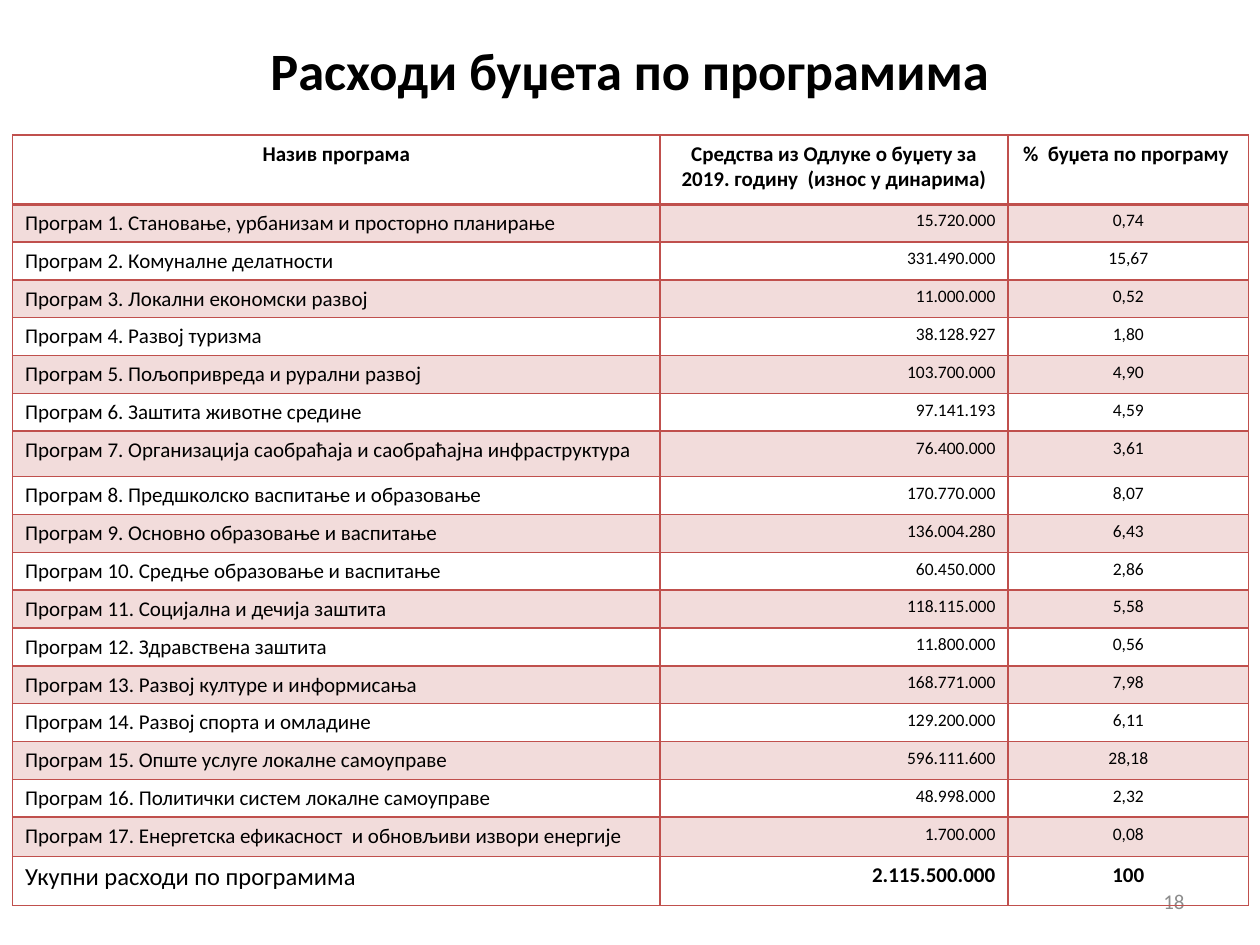
from dataclasses import dataclass
from lxml.etree import SubElement
from pptx import Presentation
from pptx.dml.color import RGBColor
from pptx.enum.text import MSO_ANCHOR, PP_ALIGN
from pptx.oxml import parse_xml
from pptx.oxml.ns import nsdecls, qn
from pptx.util import Inches, Pt

WIDE, HIGH = 10, 7.5
FONT = "Calibri"
HUES = {"ink": "000000", "red": "C0504D", "gray": "8C8C8C"}
LEFT, MID, RIGHT = PP_ALIGN.LEFT, PP_ALIGN.CENTER, PP_ALIGN.RIGHT


@dataclass
class Look:
    size: float
    align: PP_ALIGN
    bold: bool = False
    hue: str = "ink"


@dataclass
class Row:
    cells: tuple[str, str, str]
    looks: tuple[Look, Look, Look]
    high: float = 0.29
    top: float = 1
    base: float = 1
    band: bool = False


# Table text
HEAD = ("Назив програма",
        "Средства из Одлуке о буџету за 2019. годину  (износ у динарима)",
        "%  буџета по програму ")
ITEMS = [
    ("Становање, урбанизам и просторно планирање", "15.720.000", "0,74"),
    ("Комуналне делатности", "331.490.000", "15,67"),
    ("Локални економски развој", "11.000.000", "0,52"),
    ("Развој туризма", "38.128.927", "1,80"),
    ("Пољопривреда и рурални развој", "103.700.000", "4,90"),
    ("Заштита животне средине", "97.141.193", "4,59"),
    ("Организација саобраћаја и саобраћајна инфраструктура", "76.400.000", "3,61"),
    ("Предшколско васпитање и образовање", "170.770.000", "8,07"),
    ("Основно образовање и васпитање", "136.004.280", "6,43"),
    ("Средње образовање и васпитање", "60.450.000", "2,86"),
    ("Социјална и дечија заштита", "118.115.000", "5,58"),
    ("Здравствена заштита", "11.800.000", "0,56"),
    ("Развој културе и информисања", "168.771.000", "7,98"),
    ("Развој спорта и омладине", "129.200.000", "6,11"),
    ("Опште услуге локалне самоуправе", "596.111.600", "28,18"),
    ("Политички систем локалне самоуправе", "48.998.000", "2,32"),
    ("Енергетска ефикасност  и обновљиви извори енергије", "1.700.000", "0,08"),
]
TOTAL = ("Укупни расходи по програмима", "2.115.500.000", "100")
COLS = (5.14, 2.76, 1.91)
TALL = {7: 0.36, 17: 0.31}


def place(left: float, top: float, wide: float, high: float) -> tuple:
    """Turn shares of the slide into lengths."""
    return (Inches(left * WIDE), Inches(top * HIGH),
            Inches(wide * WIDE), Inches(high * HIGH))


def write(frame, text: str, look: Look) -> None:
    frame.text = text
    line = frame.paragraphs[0]
    line.alignment = look.align
    for run in line.runs:
        run.font.name = FONT
        run.font.size = Pt(look.size)
        run.font.bold = look.bold
        run.font.color.rgb = RGBColor.from_string(HUES[look.hue])


def edge(cell, row: Row) -> None:
    """Draw the four borders, which must stand before the fill."""
    sides = {"lnL": 1, "lnR": 1, "lnT": row.top, "lnB": row.base}
    props = cell._tc.get_or_add_tcPr()
    for spot, (tag, width) in enumerate(sides.items()):
        props.insert(spot, parse_xml(
            f'<a:{tag} {nsdecls("a")} w="{Pt(width)}"><a:solidFill>'
            f'<a:srgbClr val="{HUES["red"]}"/></a:solidFill></a:{tag}>'))


def tint(cell, band: bool) -> None:
    if not band:
        cell.fill.background()
        return
    cell.fill.solid()
    cell.fill.fore_color.rgb = RGBColor.from_string(HUES["red"])
    tone = cell._tc.tcPr.find(qn("a:solidFill"))[0]
    SubElement(tone, qn("a:alpha")).set("val", "20000")


def list_rows() -> list[Row]:
    rows = [Row(HEAD, (Look(12, MID, True),) * 3, 0.55, base=2)]
    plain = (Look(12, LEFT), Look(10, RIGHT), Look(10, MID))
    for num, (name, sum_, part) in enumerate(ITEMS, 1):
        rows.append(Row((f"Програм {num}. {name}", sum_, part), plain,
                        TALL.get(num, 0.29), top=2 if num == 1 else 1,
                        band=num % 2 == 1))
    last = (Look(14, LEFT), Look(12, RIGHT, True), Look(12, MID, True))
    return rows + [Row(TOTAL, last, 0.39)]


def draw_table(slide, rows: list[Row]) -> None:
    high = sum(row.high for row in rows)
    grid = slide.shapes.add_table(
        len(rows), len(COLS), *place(0.01, 1.07 / HIGH, 0.98, high / HIGH)).table
    grid.first_row = grid.horz_banding = False
    for col, wide in zip(grid.columns, COLS):
        col.width = Inches(wide)
    for line, row in zip(grid.rows, rows):
        line.height = Inches(row.high)
        for cell, text, look in zip(line.cells, row.cells, row.looks):
            write(cell.text_frame, text, look)
            tint(cell, row.band)
            edge(cell, row)


def main() -> None:
    deck = Presentation()
    deck.slide_width, deck.slide_height = Inches(WIDE), Inches(HIGH)
    slide = deck.slides.add_slide(deck.slide_layouts[5])

    # Title
    title = slide.shapes.title
    title.left, title.top, title.width, title.height = place(
        0.074, 0.13 / HIGH, 0.852, 0.85 / HIGH)
    title.text_frame.vertical_anchor = MSO_ANCHOR.MIDDLE
    write(title.text_frame, "Расходи буџета по програмима", Look(30, MID, True))

    # Page number, behind the table
    page = slide.shapes.add_textbox(*place(0.717, 6.95 / HIGH, 0.233, 0.4 / HIGH))
    page.text_frame.word_wrap = True
    page.text_frame.vertical_anchor = MSO_ANCHOR.MIDDLE
    write(page.text_frame, "18", Look(12, RIGHT, hue="gray"))

    # Budget table
    draw_table(slide, list_rows())
    deck.save("out.pptx")


if __name__ == "__main__":
    main()
